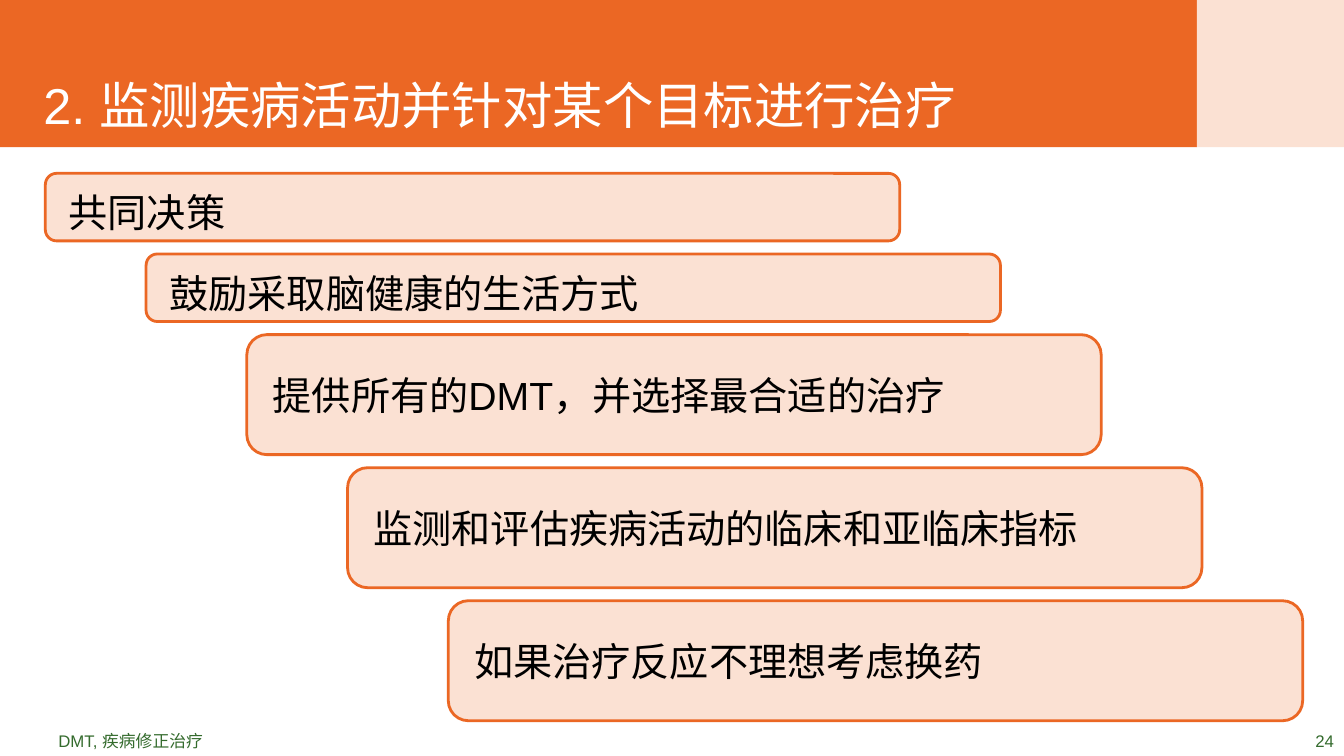
import pptx
import pptx.dml.color
import pptx.enum.shapes
import pptx.enum.text
import pptx.util

Inches = pptx.util.Inches
ALIGN = pptx.enum.text.PP_ALIGN
ANCHOR = pptx.enum.text.MSO_ANCHOR

COLORS = {"orange": "EB6724", "peach": "FBE1D3", "white": "FFFFFF",
          "black": "000000", "green": "346B2D"}
TITLE = "2. 监测疾病活动并针对某个目标进行治疗"
STEPS = [  # text, height in inches, line spacing
    ("共同决策", 0.67, 1.2),
    ("鼓励采取脑健康的生活方式", 0.67, 1.2),
    ("提供所有的DMT，并选择最合适的治疗", 1.19, 1.0),
    ("监测和评估疾病活动的临床和亚临床指标", 1.19, 1.0),
    ("如果治疗反应不理想考虑换药", 1.19, 1.0),
]


def rgb(name):
    return pptx.dml.color.RGBColor.from_string(COLORS[name])


def fill(sp, color):
    sp.fill.solid()
    sp.fill.fore_color.rgb = rgb(color)


def write(sp, text, size, color, anchor, insets, align=ALIGN.LEFT):
    tf = sp.text_frame
    tf.text = text
    tf.word_wrap = True
    tf.auto_size = pptx.enum.text.MSO_AUTO_SIZE.NONE
    tf.vertical_anchor = anchor
    tf.margin_left, tf.margin_top, tf.margin_right, tf.margin_bottom = map(Inches, insets)
    p = tf.paragraphs[0]
    p.alignment = align
    font = p.runs[0].font
    font.name = "Arial"
    font.size = pptx.util.Pt(size)
    font.color.rgb = rgb(color)
    return p


def add_header(s, x, y, w, h):
    # Square accent at the right end, title band over the rest
    sp = s.shapes.add_shape(pptx.enum.shapes.MSO_SHAPE.RECTANGLE,
                            Inches(x + w - h), Inches(y), Inches(h), Inches(h))
    sp.shadow.inherit = False
    fill(sp, "peach")
    sp.line.fill.background()

    title = s.shapes.title
    title.left, title.top = Inches(x), Inches(y)
    title.width, title.height = Inches(w - h), Inches(h)
    fill(title, "orange")
    write(title, TITLE, 36, "white", ANCHOR.BOTTOM, (0.43, 0.12, 0.43, 0.12))


def add_staircase(s, x, y, w, shift=1, gap=0.13):
    # Each step starts further right, below the one before
    box_w = w - shift * (len(STEPS) - 1)
    for i, (text, h, spacing) in enumerate(STEPS):
        sp = s.shapes.add_shape(pptx.enum.shapes.MSO_SHAPE.ROUNDED_RECTANGLE,
                                Inches(x + i * shift), Inches(y), Inches(box_w), Inches(h))
        sp.shadow.inherit = False
        fill(sp, "peach")
        sp.line.color.rgb = rgb("orange")
        sp.line.width = pptx.util.Pt(2)
        p = write(sp, text, 28, "black", ANCHOR.MIDDLE, (0.2, 0, 0, 0))
        p.line_spacing = spacing
        y += h + gap


def add_footer(s, x, y, w, h, number_w=0.9):
    # Abbreviation note on the left, page number on the right
    note = s.shapes.add_textbox(Inches(x), Inches(y), Inches(w - number_w), Inches(h))
    write(note, "DMT, 疾病修正治疗", 12, "green", ANCHOR.BOTTOM, (0, 0.05, 0, 0.05))
    number = s.shapes.add_textbox(Inches(x + w - number_w), Inches(y),
                                  Inches(number_w), Inches(h))
    write(number, "24", 12, "green", ANCHOR.BOTTOM, (0, 0.05, 0.1, 0.05), ALIGN.RIGHT)


def main():
    prs = pptx.Presentation()
    prs.slide_width, prs.slide_height = Inches(13.34), Inches(7.5)
    s = prs.slides.add_slide(prs.slide_layouts.get_by_name("Title Only"))
    add_header(s, 0, 0, 13.34, 1.46)
    add_staircase(s, 0.45, 1.72, 12.48)
    add_footer(s, 0.58, 7.2, 12.76, 0.3)
    prs.save("out.pptx")


if __name__ == "__main__":
    main()
